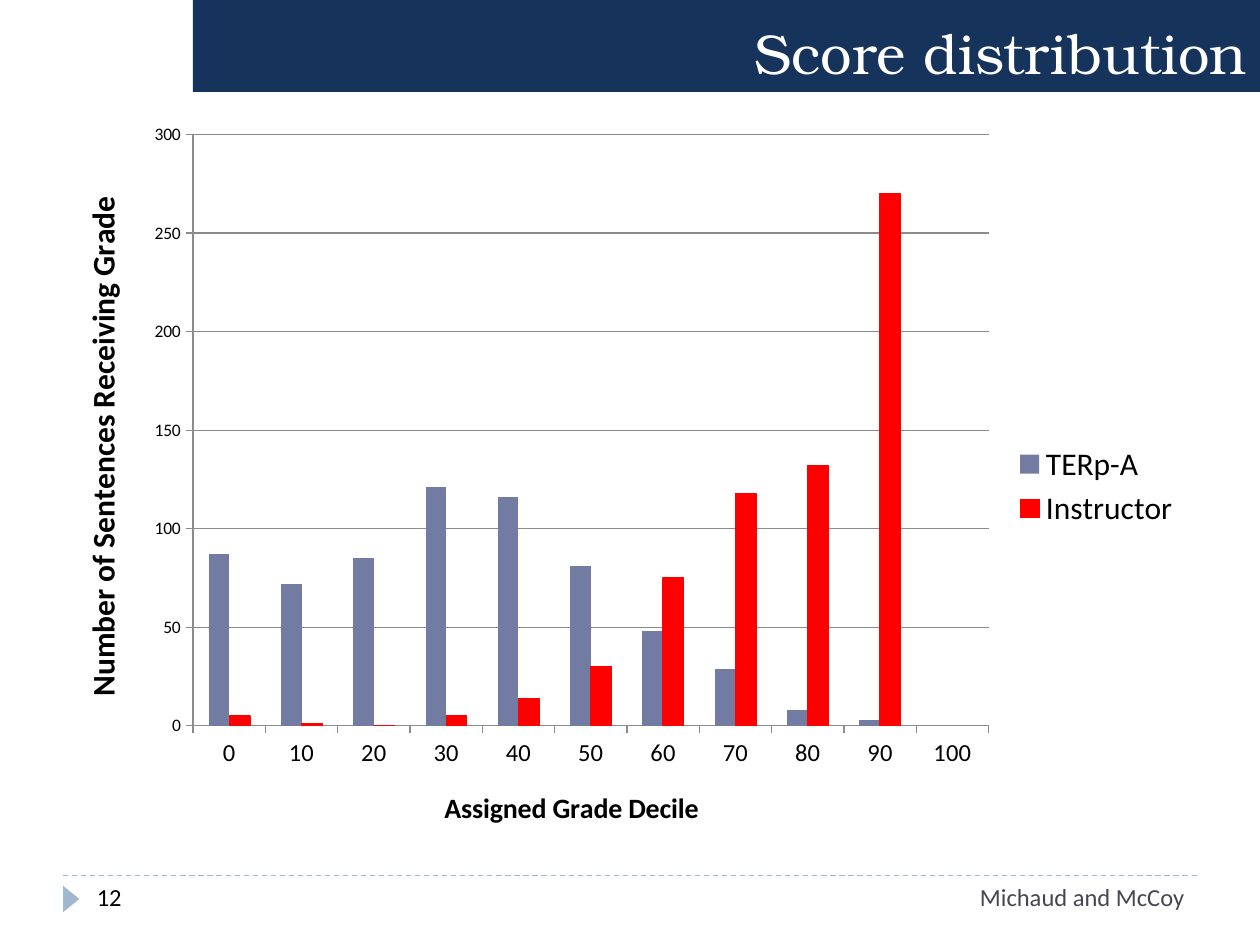
from dataclasses import dataclass

from lxml import etree
from pptx import Presentation
from pptx.chart.data import CategoryChartData
from pptx.dml.color import RGBColor
from pptx.enum.chart import XL_CHART_TYPE, XL_LEGEND_POSITION, XL_TICK_MARK
from pptx.enum.dml import MSO_LINE
from pptx.enum.shapes import MSO_CONNECTOR, MSO_SHAPE
from pptx.enum.text import MSO_ANCHOR, MSO_AUTO_SIZE, PP_ALIGN
from pptx.oxml.ns import qn
from pptx.util import Inches, Pt

COLUMN = XL_CHART_TYPE.COLUMN_CLUSTERED
LEGEND_RIGHT = XL_LEGEND_POSITION.RIGHT
TICK_OUT = XL_TICK_MARK.OUTSIDE
TICK_NONE = XL_TICK_MARK.NONE
DASH = MSO_LINE.DASH
STRAIGHT = MSO_CONNECTOR.STRAIGHT
TRIANGLE = MSO_SHAPE.ISOSCELES_TRIANGLE
BOTTOM = MSO_ANCHOR.BOTTOM
NO_FIT = MSO_AUTO_SIZE.NONE
LEFT, RIGHT = PP_ALIGN.LEFT, PP_ALIGN.RIGHT

WIDTH, HEIGHT = Inches(10), Inches(7.5)
COLS, ROWS = 100, 75
PLOT = {"x": 0.12, "y": 0.03, "w": 0.7, "h": 0.79}

DECILES = [str(grade) for grade in range(0, 101, 10)]
TERP = [87, 72, 85, 121, 116, 81, 48, 29, 8, 3, None]
TEACHER = [5, 1, 0, 5, 14, 30, 75, 118, 132, 270, None]


@dataclass(frozen=True)
class Theme:
    """Colours, fonts and type sizes of the slide."""

    navy: RGBColor = RGBColor.from_string("16335B")
    white: RGBColor = RGBColor.from_string("FFFFFF")
    black: RGBColor = RGBColor.from_string("000000")
    slate: RGBColor = RGBColor.from_string("464653")
    sky: RGBColor = RGBColor.from_string("9FB8CD")
    grid: RGBColor = RGBColor.from_string("8B8B8B")
    blue: RGBColor = RGBColor.from_string("727CA3")
    red: RGBColor = RGBColor.from_string("FF0000")
    head: str = "TeX Gyre Bonum"
    body: str = "Calibri"
    title: int = 32
    large: int = 18
    medium: int = 16
    small: int = 14
    tiny: int = 10
    thin: float = 0.75


THEME = Theme()


def place(col, row, cols, rows):
    """Turn grid columns and rows into left, top, width and height."""
    return (int(WIDTH * col / COLS), int(HEIGHT * row / ROWS),
            int(WIDTH * cols / COLS), int(HEIGHT * rows / ROWS))


def style(font, size, color, face=THEME.body):
    """Set the size, colour and face of a font."""
    font.size = Pt(size)
    font.color.rgb = color
    font.name = face


def write(frame, text, size, color, face=THEME.body, align=LEFT):
    """Write one styled run into a text frame."""
    para = frame.paragraphs[0]
    para.alignment = align
    run = para.add_run()
    run.text = text
    style(run.font, size, color, face)
    return run


def add_title(slide, text, area):
    """Fill the title placeholder as a dark banner."""
    title = slide.shapes.title
    title.left, title.top, title.width, title.height = area
    title.fill.solid()
    title.fill.fore_color.rgb = THEME.navy
    frame = title.text_frame
    frame.auto_size = NO_FIT
    frame.vertical_anchor = BOTTOM
    write(frame, text, THEME.title, THEME.white, THEME.head, RIGHT)


def add_label(slide, text, area, color, align=LEFT):
    """Add a line of footer text."""
    frame = slide.shapes.add_textbox(*area).text_frame
    frame.word_wrap = True
    write(frame, text, THEME.small, color, align=align)


def add_rule(slide, col, row, cols):
    """Add a dashed horizontal rule."""
    left, top, width, _ = place(col, row, cols, 0)
    rule = slide.shapes.add_connector(STRAIGHT, left, top, left + width, top)
    rule.line.color.rgb = THEME.sky
    rule.line.width = Pt(THEME.thin)
    rule.line.dash_style = DASH
    etree.SubElement(rule.element.spPr, qn("a:effectLst"))


def add_marker(slide, area):
    """Add a triangle that points to the right."""
    mark = slide.shapes.add_shape(TRIANGLE, *area)
    mark.rotation = 90
    mark.shadow.inherit = False
    mark.fill.solid()
    mark.fill.fore_color.rgb = THEME.sky
    mark.line.fill.background()


def set_axis(axis, text, size, tick):
    """Give an axis its title, ticks, line and type size."""
    run = write(axis.axis_title.text_frame, text, size, THEME.black)
    run.font.bold = True
    axis.major_tick_mark = TICK_OUT
    axis.minor_tick_mark = TICK_NONE
    style(axis.tick_labels.font, tick, THEME.black)
    axis.format.line.color.rgb = THEME.grid
    axis.format.line.width = Pt(THEME.thin)


def set_plot(chart):
    """Fix the inner plot area as shares of the chart."""
    area = chart.element.find(".//" + qn("c:plotArea"))
    for old in area.findall(qn("c:layout")):
        area.remove(old)
    layout = etree.Element(qn("c:layout"))
    area.insert(0, layout)
    manual = etree.SubElement(layout, qn("c:manualLayout"))
    modes = {"layoutTarget": "inner", "xMode": "edge", "yMode": "edge"}
    for name, value in {**modes, **PLOT}.items():
        etree.SubElement(manual, qn("c:" + name)).set("val", str(value))


def add_bars(slide, area):
    """Add the clustered column chart of both graders."""
    data = CategoryChartData()
    data.categories = DECILES
    data.add_series("TERp-A", TERP)
    data.add_series("Instructor", TEACHER)
    chart = slide.shapes.add_chart(COLUMN, *area, data).chart
    chart.has_title = False
    style(chart.font, THEME.tiny, THEME.black)
    set_plot(chart)
    set_axis(chart.category_axis, "Assigned Grade Decile",
             THEME.medium, THEME.small)
    values = chart.value_axis
    set_axis(values, "Number of Sentences Receiving Grade",
             THEME.large, THEME.tiny)
    values.minimum_scale, values.maximum_scale = 0, 300
    values.major_unit = 50
    values.has_major_gridlines = True
    lines = values.major_gridlines.format.line
    lines.color.rgb = THEME.grid
    lines.width = Pt(THEME.thin)
    chart.has_legend = True
    chart.legend.position = LEGEND_RIGHT
    chart.legend.include_in_layout = False
    style(chart.legend.font, THEME.large, THEME.black)
    plot = chart.plots[0]
    plot.gap_width = 150
    plot.overlap = 0
    plot.vary_by_categories = False
    for series, color in zip(plot.series, (THEME.blue, THEME.red)):
        series.format.fill.solid()
        series.format.fill.fore_color.rgb = color
    edge = plot.series[1].format.line
    edge.color.rgb = THEME.red
    edge.width = Pt(THEME.thin)


def main():
    """Build the slide and save it."""
    deck = Presentation()
    deck.slide_width, deck.slide_height = WIDTH, HEIGHT
    slide = deck.slides.add_slide(deck.slide_layouts[5])
    add_rule(slide, 5, 69.5, 90)
    add_marker(slide, place(4.6, 70.7, 2.1, 1.3))
    add_title(slide, "Score distribution", place(15.3, 0, 84.7, 7.3))
    add_bars(slide, place(4.5, 8.9, 90.2, 59.4))
    add_label(slide, "12", place(6.7, 69.5, 21.7, 4), THEME.black)
    add_label(slide, "Michaud and McCoy", place(31.7, 69.5, 63.3, 4),
              THEME.slate, RIGHT)
    deck.save("out.pptx")


if __name__ == "__main__":
    main()
